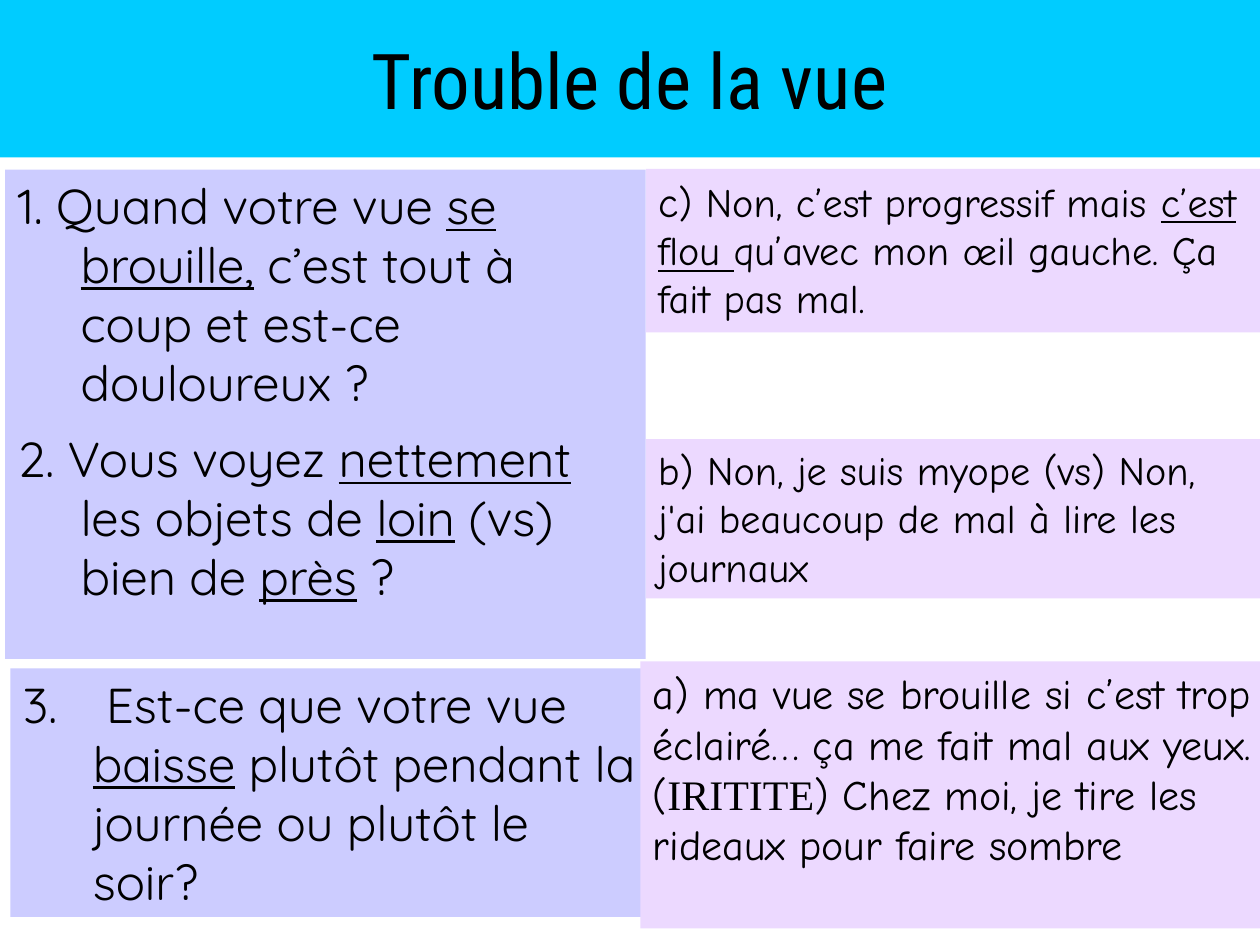
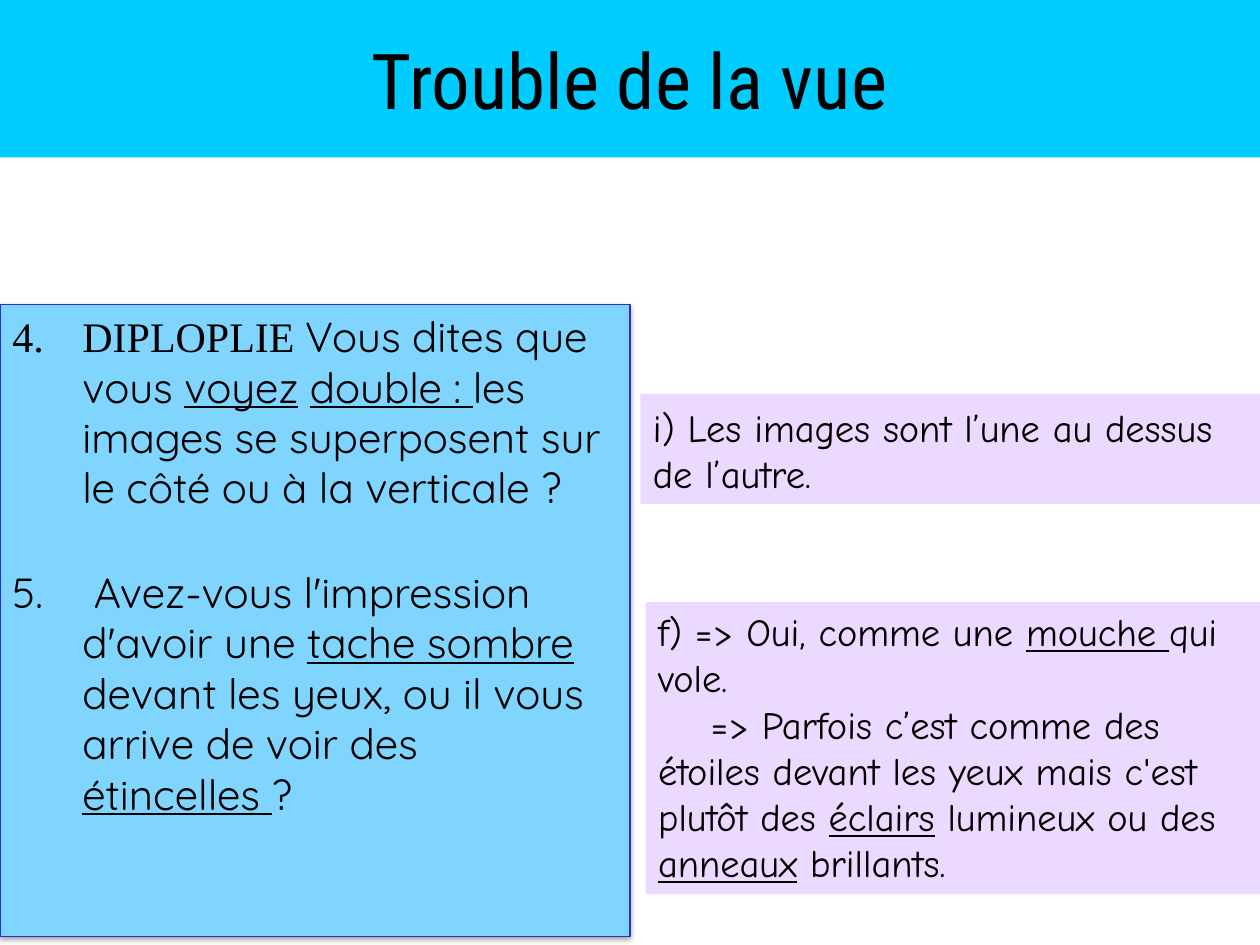
from dataclasses import dataclass

from lxml.etree import SubElement
from pptx import Presentation
from pptx.dml.color import RGBColor
from pptx.enum.text import MSO_ANCHOR, MSO_AUTO_SIZE, PP_ALIGN
from pptx.oxml.ns import qn
from pptx.util import Pt

BLACK = RGBColor(0x00, 0x00, 0x00)
CYAN = RGBColor(0x00, 0xCC, 0xFF)
LAVENDER = RGBColor(0xCC, 0xCC, 0xFF)
LILAC = RGBColor(0xEC, 0xD9, 0xFF)
SKY = RGBColor(0x80, 0xD5, 0xFF)
INDIGO = RGBColor(0x2E, 0x2E, 0xCB)

TITLE_FONT = "Roboto Condensed"
QUESTION_FONT = "Quicksand"
ANSWER_FONT = "Comic Neue"
TERM_FONT = "Times New Roman"

WIDTH, HEIGHT = 720, 540
BAND_HEIGHT = 90


@dataclass
class Span:
    text: str
    underline: bool = False
    font: str = None
    size: float = None


def key(text):
    """Underlined key words."""
    return Span(text, underline=True)


def term(text):
    """Medical term in the serif font."""
    return Span(text, font=TERM_FONT)


def place(shape, area):
    shape.left, shape.top, shape.width, shape.height = map(Pt, area)


def add_title(page):
    title = page.shapes.title
    place(title, (0, 0, WIDTH, BAND_HEIGHT))
    title.fill.solid()
    title.fill.fore_color.rgb = CYAN
    frame = title.text_frame
    frame.text = "Trouble de la vue"
    frame.auto_size = MSO_AUTO_SIZE.NONE
    frame.vertical_anchor = MSO_ANCHOR.MIDDLE
    para = frame.paragraphs[0]
    para.alignment = PP_ALIGN.CENTER
    para.font.name, para.font.size = TITLE_FONT, Pt(44)
    para.font.color.rgb = BLACK


def add_box(page, area, paragraphs, fill, font, size, gap=0):
    """Filled text box; each paragraph is a list of strings and spans."""
    box = page.shapes.add_textbox(*map(Pt, area))
    box.fill.solid()
    box.fill.fore_color.rgb = fill
    frame = box.text_frame
    frame.word_wrap = True
    frame.auto_size = MSO_AUTO_SIZE.NONE
    for index, spans in enumerate(paragraphs):
        para = frame.add_paragraph() if index else frame.paragraphs[0]
        para.space_before = Pt(gap if index else 0)
        para.font.name, para.font.size = font, Pt(size)
        para.font.color.rgb = BLACK
        for span in spans:
            if span == "\n":
                para.add_line_break()
                continue
            span = span if isinstance(span, Span) else Span(span)
            run = para.add_run()
            run.text = span.text
            run.font.name = span.font or font
            run.font.size = Pt(span.size or size)
            run.font.color.rgb = BLACK
            if span.underline:
                run.font.underline = True
    return box


def indent(para, margin, first):
    properties = para._p.get_or_add_pPr()
    properties.set("marL", str(Pt(margin)))
    properties.set("indent", str(Pt(first)))
    return properties


def add_question(page, area, paragraphs, fill, size, hang, start=None, gap=0):
    box = add_box(page, area, paragraphs, fill, QUESTION_FONT, size, gap)
    for para in box.text_frame.paragraphs:
        properties = indent(para, hang, -hang)
        if start:
            SubElement(properties, qn("a:buAutoNum"),
                       type="arabicPeriod", startAt=str(start))
    return box


def add_answer(page, area, paragraphs, size):
    return add_box(page, area, paragraphs, LILAC, ANSWER_FONT, size)


def add_outline_and_shadow(box):
    box.line.color.rgb = INDIGO
    box.line.width = Pt(0.75)
    box.shadow.inherit = False
    effects = box._element.spPr.find(qn("a:effectLst"))
    shadow = SubElement(effects, qn("a:outerShdw"), blurRad=str(Pt(3.1)),
                        dist=str(Pt(1.6)), dir="5400000", rotWithShape="0")
    colour = SubElement(shadow, qn("a:srgbClr"), val=str(BLACK))
    SubElement(colour, qn("a:alpha"), val="38000")


def add_blur_page(page):
    add_title(page)
    # Questions 1 and 2
    add_question(page, (3, 97, 366, 279.5), [
        ["1. Quand votre vue ", key("se brouille,"),
         " c’est tout à coup et est-ce douloureux ?"],
        ["2. Vous voyez ", key("nettement"), " les objets de ", key("loin"),
         " (vs) bien de ", key("près"), " ?"],
    ], LAVENDER, 28, hang=36, gap=10)
    # Their answers
    add_answer(page, (369, 96.5, 351, 93.5), [
        [Span("c", size=24), ") Non, c’est progressif mais ", key("c’est flou "),
         "qu’avec mon œil gauche. Ça fait pas mal."],
    ], 23)
    add_answer(page, (369, 251, 351, 91), [
        ["b) Non, je suis myope (vs) Non, j'ai beaucoup de mal à lire les journaux"],
    ], 23)
    # Question 3 and its answer
    add_question(page, (6, 382, 366, 142), [
        [" Est-ce que votre vue ", key("baisse"),
         " plutôt pendant la journée ou plutôt le soir?"],
    ], LAVENDER, 28, hang=40, start=3)
    add_answer(page, (366, 378, 357, 152.5), [
        ["a) ma vue se brouille si c’est trop éclairé… ça me fait mal aux yeux. (",
         term("IRITITE"), ") Chez moi, je tire les rideaux pour faire sombre"],
    ], 24)


def add_double_vision_page(page):
    add_title(page)
    # Answers
    images_answer = add_answer(page, (366, 225, 354, 63), [
        ["i) Les images sont l’une au dessus de l’autre."],
    ], 22)
    images_answer.text_frame.margin_top = Pt(6)
    spots_answer = add_answer(page, (369, 344, 357, 167), [
        ["f) => Oui, comme une ", key("mouche "), "qui vole."],
        ["=> Parfois c’est comme des étoiles devant les yeux mais c'est plutôt des ",
         key("éclairs"), " lumineux ou des ", key("anneaux"), " brillants."],
    ], 22)
    indent(spots_answer.text_frame.paragraphs[1], 0, 30)
    # Questions 4 and 5
    questions = add_question(page, (0, 174, 360, 361), [
        [term("DIPLOPLIE "), "Vous dites que vous ", key("voyez"), " ",
         key("double : "),
         "les images se superposent sur le côté ou à la verticale ?"],
        [" Avez-vous l'impression d'avoir une ", key("tache sombre "),
         "devant les yeux, ou il vous arrive de voir des", "\n",
         key("étincelles "), "?"],
    ], SKY, 24, hang=40, start=4, gap=31)
    add_outline_and_shadow(questions)


def main():
    deck = Presentation()
    deck.slide_width, deck.slide_height = Pt(WIDTH), Pt(HEIGHT)
    title_only = deck.slide_layouts[5]
    for build in (add_blur_page, add_double_vision_page):
        build(deck.slides.add_slide(title_only))
    deck.save("out.pptx")


if __name__ == "__main__":
    main()
